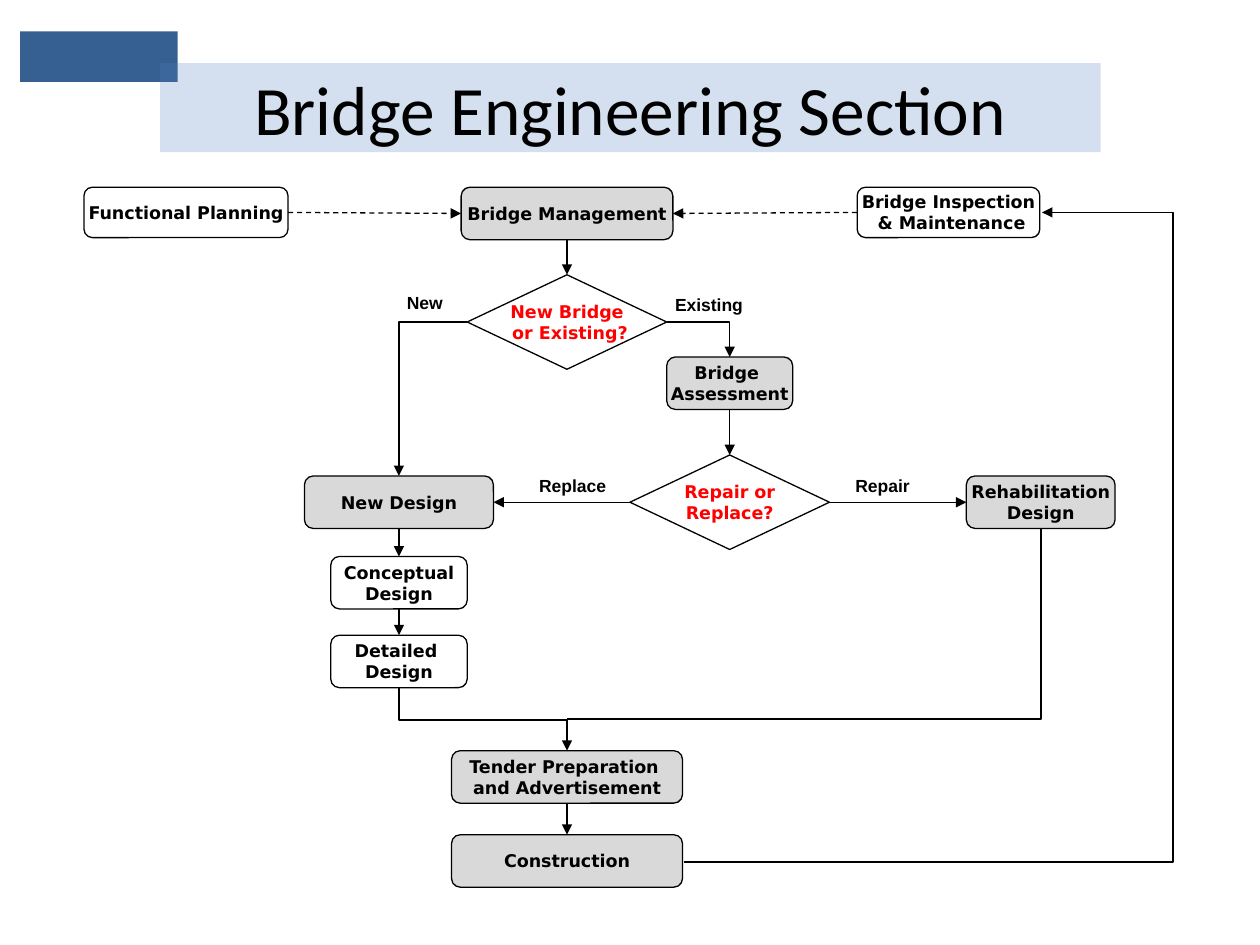
from collections import namedtuple

from lxml import etree
from pptx import Presentation
from pptx import util as u
from pptx.dml.color import RGBColor
from pptx.enum import dml, shapes, text
from pptx.oxml import ns

Box = namedtuple("Box", "left top width height")
TOP, LEFT, BOTTOM, RIGHT = range(4)
GREY, WHITE, BLACK, RED = "D9D9D9", "FFFFFF", "000000", "FF0000"
MAIN, DESIGN, ASSESS, REHAB = 276, 180, 369, 546.7
ROUND, DECISION = shapes.MSO_SHAPE.ROUNDED_RECTANGLE, shapes.MSO_SHAPE.FLOWCHART_DECISION

NODES = {
    "functional": ("Functional Planning", 58.3, 14.4, 116.6, 28.8, WHITE),
    "management": ("Bridge Management", MAIN, 15, 121, 30, GREY),
    "inspection": ("Bridge Inspection\n & Maintenance", 494, 14.4, 104.4, 28.8, WHITE),
    "new_or_existing": ("New Bridge\v or Existing?", MAIN, 77, 114, 54, None),
    "assessment": ("Bridge \vAssessment", ASSESS, 112, 72, 30, GREY),
    "repair_or_replace": ("Repair or\vReplace?", ASSESS, 180, 114, 54, None),
    "new_design": ("New Design", DESIGN, 180, 108, 30, GREY),
    "rehabilitation": ("Rehabilitation\nDesign", REHAB, 180, 85, 30, GREY),
    "conceptual": ("Conceptual\nDesign", DESIGN, 226, 78, 30, WHITE),
    "detailed": ("Detailed \vDesign", DESIGN, 271, 78, 30, WHITE),
    "tender": ("Tender Preparation \nand Advertisement", MAIN, 337, 132, 30, GREY),
    "construction": ("Construction", MAIN, 385, 132, 30, GREY),
}
LINKS = [
    ("functional", RIGHT, "management", LEFT, "dash"),
    ("inspection", LEFT, "management", RIGHT, "dash"),
    ("management", BOTTOM, "new_or_existing", TOP, ""),
    ("new_or_existing", LEFT, "new_design", TOP, "bent"),
    ("new_or_existing", RIGHT, "assessment", TOP, "bent"),
    ("assessment", BOTTOM, "repair_or_replace", TOP, ""),
    ("repair_or_replace", LEFT, "new_design", RIGHT, ""),
    ("repair_or_replace", RIGHT, "rehabilitation", LEFT, ""),
    ("new_design", BOTTOM, "conceptual", TOP, ""),
    ("conceptual", BOTTOM, "detailed", TOP, ""),
    ("tender", BOTTOM, "construction", TOP, ""),
]
LABELS = [
    ("New", 177.4, 56.4, 35.3),
    ("Existing", 330.7, 57.2, 53.3),
    ("Replace", 253, 160.8, 53.3),
    ("Repair", 433.7, 160.8, 46),
]
ROUTES = [
    ([(REHAB, 195), (REHAB, 304), (MAIN, 304)], False),
    ([(DESIGN, 286), (DESIGN, 304.6), (MAIN, 304.6), (MAIN, 322)], True),
    ([(343, 385.5), (622.5, 385.5), (622.5, 14.4), (547.5, 14.4)], True),
]


def color(value):
    """Turn a hex string into a colour."""
    return RGBColor.from_string(value)


def write(shape, words, font, size, ink, bold=True, align=text.PP_ALIGN.CENTER):
    """Put formatted words into a shape."""
    frame = shape.text_frame
    frame.text = words
    frame.vertical_anchor = text.MSO_ANCHOR.MIDDLE
    frame.word_wrap = False
    for para in frame.paragraphs:
        para.alignment = align
        for span in para.runs:
            span.font.name, span.font.size, span.font.bold = font, u.Pt(size), bold
            span.font.color.rgb = color(ink)


def add_block(page, kind, box, fill):
    """Add a filled shape without line or shadow."""
    shape = page.shapes.add_shape(kind, *map(u.Pt, box))
    shape.shadow.inherit = False
    shape.fill.solid()
    shape.fill.fore_color.rgb = color(fill)
    shape.line.fill.background()
    return shape


def style_line(shape, width, arrow=True):
    """Make a black line, with an arrowhead at its end if wanted."""
    shape.line.color.rgb = color(BLACK)
    shape.line.width = u.Pt(width)
    if arrow:
        etree.SubElement(shape.line._get_or_add_ln(), ns.qn("a:tailEnd"), type="triangle")


def add_node(page, box, words, center, middle, width, height, fill):
    """Add a step, or a decision when no fill is given."""
    place = Box(box.left + center - width / 2, box.top + middle - height / 2, width, height)
    node = add_block(page, ROUND if fill else DECISION, place, fill or WHITE)
    style_line(node, 0.75, arrow=False)
    write(node, words, "DejaVu Sans", 10, BLACK if fill else RED)
    return node


def add_link(page, source, start, target, end, style):
    """Join two nodes with an arrow."""
    kind = shapes.MSO_CONNECTOR.ELBOW if style == "bent" else shapes.MSO_CONNECTOR.STRAIGHT
    link = page.shapes.add_connector(kind, 0, 0, 0, 0)
    link.begin_connect(source, start)
    link.end_connect(target, end)
    properties = link._element.spPr
    if style == "bent":
        properties.find(ns.qn("a:prstGeom")).set("prst", "bentConnector2")
    if style == "dash":
        link.line.dash_style = dml.MSO_LINE.DASH
    style_line(link, 0.75)
    etree.SubElement(properties, ns.qn("a:effectLst"))


def add_route(page, box, points, arrow):
    """Draw an open line through several points."""
    spots = [(u.Pt(box.left + x), u.Pt(box.top + y)) for x, y in points]
    builder = page.shapes.build_freeform(*spots[0])
    builder.add_line_segments(spots[1:], close=False)
    route = builder.convert_to_shape()
    route.shadow.inherit = False
    route.fill.background()
    style_line(route, 1, arrow)


def add_label(page, box, words, left, top, width):
    """Add the answer beside a branch."""
    label = page.shapes.add_textbox(*map(u.Pt, (box.left + left, box.top + top, width, 19.4)))
    write(label, words, "Arial", 10, BLACK, align=text.PP_ALIGN.LEFT)
    label.text_frame.auto_size = text.MSO_AUTO_SIZE.SHAPE_TO_FIT_TEXT


def add_header(page, box):
    """Add the accent block and the translucent title band."""
    rectangle = shapes.MSO_SHAPE.RECTANGLE
    add_block(page, rectangle, Box(box.left, box.top, 90, 28.8), "376092")
    band = Box(box.left + 80, box.top + 18, box.width - 80, box.height - 18)
    title = add_block(page, rectangle, band, "4F81BD")
    tint = title._element.spPr.find(ns.qn("a:solidFill"))[0]
    etree.SubElement(tint, ns.qn("a:alpha"), val="24000")
    write(title, "Bridge Engineering Section", "Calibri", 39.6, BLACK, bold=False)


def add_flowchart(page, box):
    """Add the steps with their links, labels and long routes."""
    nodes = {name: add_node(page, box, *details) for name, details in NODES.items()}
    for source, start, target, end, style in LINKS:
        add_link(page, nodes[source], start, nodes[target], end, style)
    for label in LABELS:
        add_label(page, box, *label)
    for points, arrow in ROUTES:
        add_route(page, box, points, arrow)


def main():
    """Build and save the deck."""
    deck = Presentation()
    deck.slide_width, deck.slide_height = u.Pt(720), u.Pt(540)
    page = deck.slides.add_slide(deck.slide_layouts[6])
    add_header(page, Box(11.5, 18, 617.5, 69))
    add_flowchart(page, Box(48, 107, 622.5, 400))
    deck.save("out.pptx")


if __name__ == "__main__":
    main()
